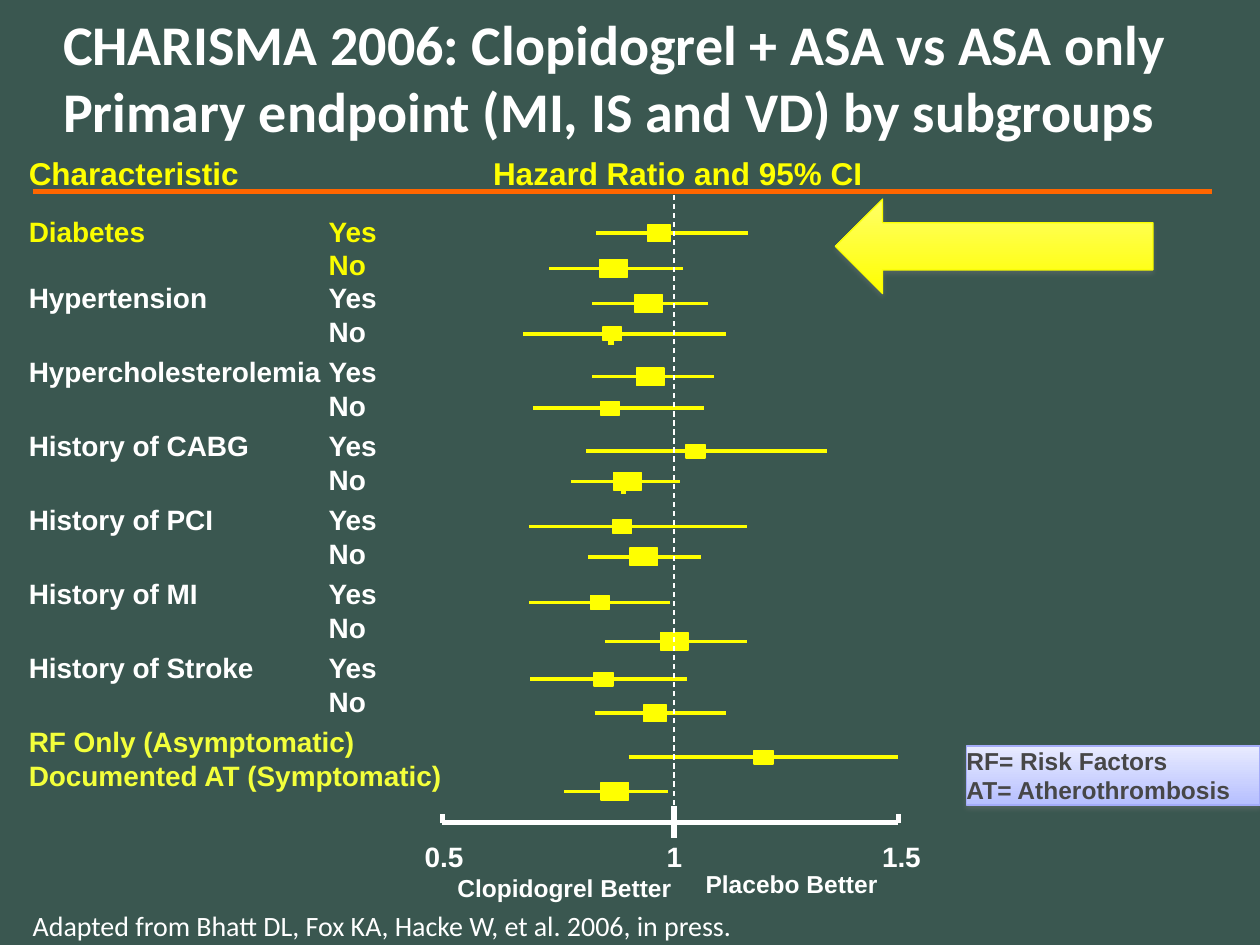
from dataclasses import dataclass
from lxml import etree
from pptx import Presentation, util as u
from pptx.dml.color import RGBColor
from pptx.enum import dml, shapes, text
from pptx.oxml.ns import qn


@dataclass(frozen=True)
class Theme:
    """Colours, fonts and type sizes of the slide."""
    background: str = "3A5750"
    white: str = "FFFFFF"
    yellow: str = "FFFF00"
    lemon: str = "FAFD00"
    lime: str = "F3FF3B"
    rule: str = "FF6600"
    ink: str = "474747"
    shadow: str = "808080"
    body: str = "Arial"
    heading: str = "Calibri"
    title: int = 32
    header: int = 18
    label: int = 16
    small: int = 14


T = Theme()
TITLE = ["CHARISMA 2006: Clopidogrel + ASA vs ASA only",
         "Primary endpoint (MI, IS and VD) by subgroups"]
HEADER = "Characteristic\t\tHazard Ratio and 95% CI"
SUBGROUPS = [
    ("Diabetes", T.lemon, T.lemon, 13), ("Hypertension", T.white, T.white, 0),
    ("Hypercholesterolemia", T.white, T.white, 4), ("History of CABG", T.white, T.white, 4),
    ("History of PCI", T.white, T.white, 4), ("History of MI", T.white, T.white, 4),
    ("History of Stroke", T.white, T.white, 4)]
RISK_GROUPS = [("RF Only (Asymptomatic)", 4), ("Documented AT (Symptomatic)", 0)]
SOURCE = "Adapted from Bhatt DL, Fox KA, Hacke W, et al. 2006, in press."
LEGEND = ["RF= Risk Factors", "AT= Atherothrombosis"]

MARKERS = {"S": (0.15, 0.11), "M": (0.18, 0.13), "L": (0.22, 0.14)}
INTERVALS = [
    (4.73, 5.23, 5.94, 1.85, "M"), (4.36, 4.87, 5.42, 2.13, "L"),
    (4.70, 5.15, 5.62, 2.41, "L"), (4.15, 4.86, 5.76, 2.65, "S"),
    (4.70, 5.16, 5.67, 2.99, "L"), (4.23, 4.84, 5.59, 3.24, "S"),
    (4.65, 5.52, 6.56, 3.58, "S"), (4.53, 4.98, 5.40, 3.82, "L"),
    (4.20, 4.94, 5.93, 4.18, "S"), (4.67, 5.11, 5.56, 4.42, "L"),
    (4.20, 4.76, 5.32, 4.78, "S"), (4.80, 5.35, 5.93, 5.09, "L"),
    (4.21, 4.79, 5.45, 5.39, "S"), (4.72, 5.20, 5.76, 5.66, "M"),
    (4.99, 6.06, 7.13, 6.01, "S"), (4.48, 4.88, 5.30, 6.28, "L")]
MARKER_TAILS = [(4.85, 2.16), (4.85, 2.70), (4.95, 3.88)]
AXIS_START, AXIS_UNITY, AXIS_END, AXIS_Y, RULE_Y = 3.51, 5.35, 7.13, 6.53, 1.52
AXIS_LABELS = [
    ("0.5", 3.37, 6.66, 0.31, T.label), ("1", 5.29, 6.66, 0.12, T.label),
    ("1.5", 7.0, 6.66, 0.31, T.label),
    ("Clopidogrel Better", 3.63, 6.93, 1.73, T.small),
    ("Placebo Better", 5.6, 6.9, 1.39, T.small)]

deck = Presentation()
deck.slide_width, deck.slide_height = u.Inches(10), u.Inches(7.5)
slide = deck.slides.add_slide(deck.slide_layouts[5])
slide.background.fill.solid()
slide.background.fill.fore_color.rgb = RGBColor.from_string(T.background)


def inches(*lengths):
    """Convert lengths in inches."""
    return [u.Inches(length) for length in lengths]


def write(paragraph, words, size=T.label, color=T.white, font=T.body, bold=True,
          before=0, leading=None):
    """Put left-aligned, formatted words into a paragraph."""
    paragraph.alignment = text.PP_ALIGN.LEFT
    paragraph.space_before = u.Pt(before)
    if leading:
        paragraph.line_spacing = u.Pt(leading)
    run = paragraph.add_run()
    run.text = words
    run.font.size, run.font.bold, run.font.name = u.Pt(size), bold, font
    run.font.color.rgb = RGBColor.from_string(color)


def next_paragraph(frame):
    """Return the empty first paragraph, or a new one."""
    first = frame.paragraphs[0]
    return frame.add_paragraph() if first.runs else first


def set_frame(frame, inset=0, wrap=True, anchor=text.MSO_ANCHOR.TOP):
    """Set the margins, wrapping and anchor of a text frame."""
    frame.margin_left = frame.margin_right = u.Inches(inset)
    frame.margin_top = frame.margin_bottom = u.Inches(inset / 2)
    frame.word_wrap, frame.vertical_anchor = wrap, anchor
    frame.auto_size = text.MSO_AUTO_SIZE.NONE
    return frame


def add_text(words, at, wrap=True, **style):
    """Add a one-paragraph text box without margins."""
    frame = set_frame(slide.shapes.add_textbox(*inches(*at)).text_frame, wrap=wrap)
    write(frame.paragraphs[0], words, **style)


def add_line(x1, y1, x2, y2, color=T.white, width=3, dash=None):
    """Add a straight line without a shadow."""
    line = slide.shapes.add_connector(shapes.MSO_CONNECTOR.STRAIGHT, *inches(x1, y1, x2, y2))
    line.line.color.rgb = RGBColor.from_string(color)
    line.line.width = u.Pt(width)
    if dash:
        line.line.dash_style = dash
    etree.SubElement(line._element.spPr, qn("a:effectLst"))


def add_panel(kind, at, colors, outline, shadow=None):
    """Add a shape with a plain or vertical gradient fill and an optional shadow."""
    panel = slide.shapes.add_shape(kind, *inches(*at))
    if len(colors) > 1:
        panel.fill.gradient()
        panel.fill.gradient_angle = 270
        for stop, color, position in zip(panel.fill.gradient_stops, colors, (0, 1)):
            stop.color.rgb, stop.position = RGBColor.from_string(color), position
    else:
        panel.fill.solid()
        panel.fill.fore_color.rgb = RGBColor.from_string(colors[0])
    panel.line.color.rgb = RGBColor.from_string(outline)
    panel.line.width = u.Pt(0.75)
    panel.shadow.inherit = False
    if shadow:
        distance, opacity = shadow
        effects = panel._element.spPr.find(qn("a:effectLst"))
        outer = etree.SubElement(effects, qn("a:outerShdw"), blurRad=str(u.Pt(3.1)),
                                 dist=str(u.Pt(distance)), dir="5400000", rotWithShape="0")
        tint = etree.SubElement(outer, qn("a:srgbClr"), val=T.shadow)
        etree.SubElement(tint, qn("a:alpha"), val=str(opacity * 1000))
    return panel


def add_title():
    """Place and fill the title placeholder."""
    title = slide.shapes.title
    title.left, title.top, title.width, title.height = inches(0, 0.02, 10, 1.18)
    frame = set_frame(title.text_frame, inset=0.1, anchor=text.MSO_ANCHOR.MIDDLE)
    for words in TITLE:
        paragraph = next_paragraph(frame)
        write(paragraph, words, size=T.title, font=T.heading)
        paragraph._p.get_or_add_pPr().set("marL", str(u.Inches(0.4)))


def add_subgroups():
    """List the subgroups in tabbed columns."""
    rows = [(HEADER, dict(size=T.header, color=T.yellow))]
    for name, yes_color, no_color, before in SUBGROUPS:
        rows.append((f"{name}\tYes", dict(color=yes_color, before=before, leading=19.15)))
        rows.append(("\tNo", dict(color=no_color, leading=19.15)))
    for name, before in RISK_GROUPS:
        rows.append((name, dict(color=T.lime, before=before, leading=19.15)))
    box = slide.shapes.add_textbox(*inches(0.13, 1.17, 9.62, 5.27))
    frame = set_frame(box.text_frame, inset=0.1)
    for words, style in rows:
        paragraph = next_paragraph(frame)
        write(paragraph, words, **style)
        tabs = etree.SubElement(paragraph._p.get_or_add_pPr(), qn("a:tabLst"))
        for position, align in ((2.38, "l"), (5.15, "ctr")):
            etree.SubElement(tabs, qn("a:tab"), pos=str(u.Inches(position)), algn=align)


def add_forest_plot():
    """Draw the axis, the confidence intervals and the labels."""
    add_line(AXIS_START, AXIS_Y, AXIS_END, AXIS_Y)
    for end in (AXIS_START, AXIS_END):
        add_line(end, AXIS_Y, end, AXIS_Y - 0.07)
    for x, y in MARKER_TAILS:
        add_line(x, y, x, y + 0.04, color=T.yellow)
    for low, ratio, high, y, size in INTERVALS:
        width, height = MARKERS[size]
        add_line(low, y, high, y, color=T.yellow, width=2)
        add_panel(shapes.MSO_SHAPE.RECTANGLE,
                  (ratio - width / 2, y - height / 2, width, height), [T.yellow], T.yellow)
    add_line(AXIS_UNITY, 6.65, AXIS_UNITY, 6.4)
    add_line(AXIS_UNITY, AXIS_Y, AXIS_UNITY, RULE_Y, width=0.75, dash=dml.MSO_LINE.DASH)
    for words, x, y, width, size in AXIS_LABELS:
        add_text(words, (x, y, width, 0.27), wrap=False, size=size)


def add_legend():
    """Explain the abbreviations."""
    legend = add_panel(shapes.MSO_SHAPE.RECTANGLE, (7.67, 5.92, 2.33, 0.47),
                       ["E8EBFF", "B6BFFF"], "A4ACF9", shadow=(1.6, 38))
    frame = set_frame(legend.text_frame)
    for words in LEGEND:
        write(next_paragraph(frame), words, size=T.small, color=T.ink)


add_title()
add_subgroups()
add_line(0.26, RULE_Y, 9.62, RULE_Y, color=T.rule)
add_forest_plot()
add_text(SOURCE, (0.26, 7.21, 6.29, 0.27), font=T.heading, bold=False)
add_legend()
add_panel(shapes.MSO_SHAPE.LEFT_ARROW, (6.63, 1.58, 2.52, 0.75),
          ["FFFF68", T.yellow], "FAFE00", shadow=(1.8, 35))
deck.save("out.pptx")
